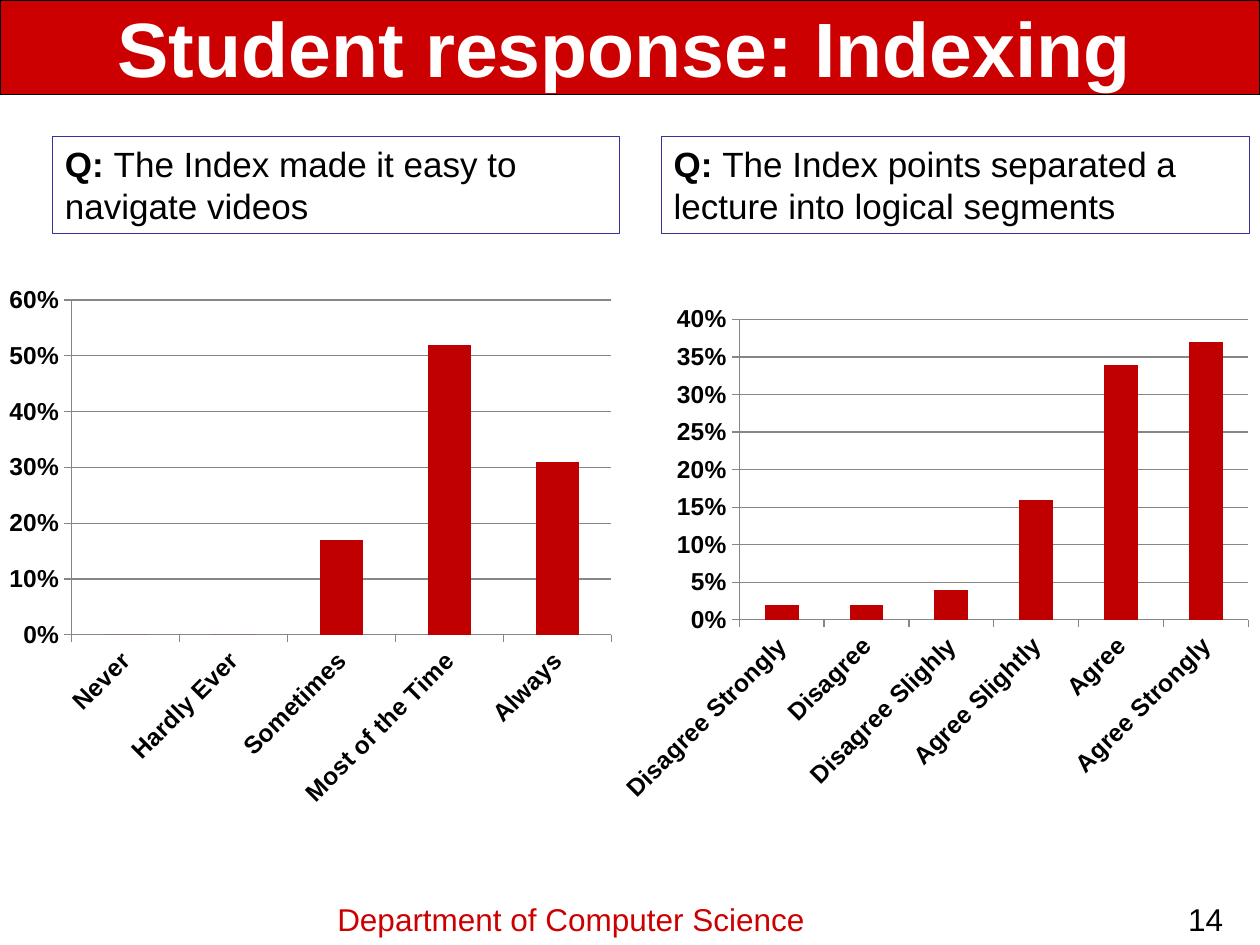
from lxml.etree import SubElement as Sub
from pptx import Presentation
from pptx.chart.data import CategoryChartData as Data
from pptx.dml.color import RGBColor as RGB
from pptx.enum.chart import XL_CHART_TYPE as Kind, XL_TICK_MARK as Tick
from pptx.enum.shapes import MSO_SHAPE as Shape
from pptx.enum.text import MSO_ANCHOR as Anchor, MSO_AUTO_SIZE as Auto, PP_ALIGN as Align
from pptx.oxml.ns import qn
from pptx.util import Cm, Pt

RED = RGB(0xCC, 0x00, 0x00)
BAR = RGB(0xC0, 0x00, 0x00)
NAVY = RGB(0x33, 0x33, 0x99)
GREY = RGB(0x86, 0x86, 0x86)
BLACK = RGB(0x00, 0x00, 0x00)
WHITE = RGB(0xFF, 0xFF, 0xFF)
FACE = "Arial"


def style(font, size, color, bold=False):
    """Set face, size, colour and weight of a font."""
    font.name, font.size, font.bold = FACE, Pt(size), bold
    font.color.rgb = color


def frame(slide, box, edge):
    """Add a plain rectangle with a thin edge and no fill."""
    rect = slide.shapes.add_shape(Shape.RECTANGLE, *map(Cm, box))
    rect.shadow.inherit = False
    rect.fill.background()
    rect.line.color.rgb = edge
    rect.line.width = Pt(0.75)
    return rect


def header(slide, box, text):
    """Put the title on a red band that fills the box."""
    left, top, width, height = box
    band = frame(slide, box, BLACK)
    band.fill.solid()
    band.fill.fore_color.rgb = RED
    title = slide.shapes.title
    band.element.addnext(title.element)
    title.left, title.top = Cm(left + 0.64), Cm(top)
    title.width, title.height = Cm(width - 1.48), Cm(height)
    body = title.text_frame
    body.text = text
    body.auto_size = Auto.NONE
    body.vertical_anchor = Anchor.MIDDLE
    body.paragraphs[0].alignment = Align.CENTER
    style(body.paragraphs[0].runs[0].font, 44, WHITE, True)


def query(slide, box, text):
    """Add a framed question with a bold lead."""
    body = frame(slide, box, NAVY).text_frame
    body.word_wrap = True
    body.vertical_anchor = Anchor.TOP
    para = body.paragraphs[0]
    para.alignment = Align.LEFT
    for part, bold in (("Q: ", True), (text, False)):
        run = para.add_run()
        run.text = part
        style(run.font, 20, BLACK, bold)


def place(chart, inner):
    """Fix the inner plot area at fractions of the chart."""
    plot = chart.element.find(".//" + qn("c:plotArea"))
    lay = plot.find(qn("c:layout"))
    if lay is None:
        lay = plot.makeelement(qn("c:layout"))
        plot.insert(0, lay)
    man = Sub(lay, qn("c:manualLayout"))
    Sub(man, qn("c:layoutTarget"), val="inner")
    for name in ("xMode", "yMode"):
        Sub(man, qn("c:" + name), val="edge")
    for name, part in zip("xywh", inner):
        Sub(man, qn("c:" + name), val=str(part))


def graph(slide, box, names, vals, top, step, inner):
    """Add a column chart of answer shares."""
    data = Data(number_format="0%")
    data.categories = names
    data.add_series("Series 1", vals)
    chart = slide.shapes.add_chart(Kind.COLUMN_STACKED, *map(Cm, box), data).chart
    chart.has_legend = chart.has_title = False
    style(chart.font, 14, BLACK, True)
    plot = chart.plots[0]
    plot.gap_width, plot.overlap = 150, 100
    plot.vary_by_categories = False
    fill = plot.series[0].format.fill
    fill.solid()
    fill.fore_color.rgb = BAR
    cat, val = chart.category_axis, chart.value_axis
    val.minimum_scale, val.maximum_scale, val.major_unit = 0, top, step
    val.has_major_gridlines = True
    val.tick_labels.number_format = "0%"
    val.tick_labels.number_format_is_linked = False
    for axis in (cat, val):
        axis.major_tick_mark = Tick.OUTSIDE
        style(axis.tick_labels.font, 14, BLACK, True)
    for line in (cat.format.line, val.format.line, val.major_gridlines.format.line):
        line.color.rgb = GREY
        line.width = Pt(0.75)
    steps = map(qn, ("c:catAx", "c:txPr", "a:bodyPr"))
    turn = chart.element.find(".//" + "/".join(steps))
    turn.set("rot", "-2700000")
    turn.set("vert", "horz")
    place(chart, inner)


def label(slide, box, text, color, wrap):
    """Add one line of footer text."""
    body = slide.shapes.add_textbox(*map(Cm, box)).text_frame
    body.word_wrap = wrap
    body.text = text
    style(body.paragraphs[0].runs[0].font, 18, color)


def footer(slide, box, text, page):
    """Place the department name and page number in the box."""
    left, top, width, height = box
    label(slide, (left + 6.55, top, 10.03, height), text, RED, False)
    label(slide, (left + width - 1.7, top, 1.27, height), page, BLACK, True)


def main():
    """Build and save the slide."""
    deck = Presentation()
    deck.slide_width, deck.slide_height = Cm(25.4), Cm(19.05)
    slide = deck.slides.add_slide(deck.slide_layouts[5])
    header(slide, (0, 0, 25.4, 1.9), "Student response: Indexing")
    query(slide, (1.06, 2.75, 11.43, 1.96),
          "The Index made it easy to navigate videos")
    query(slide, (13.33, 2.75, 11.86, 1.96),
          "The Index points separated a lecture into logical segments")
    graph(slide, (0.1, 5.05, 12.24, 12.5),
          ("Never", "Hardly Ever", "Sometimes", "Most of the Time", "Always"),
          (0, 0, 0.17, 0.52, 0.31), 0.6, 0.1, (0.11, 0.08, 0.89, 0.54))
    graph(slide, (12.27, 5.92, 13.16, 10.44),
          ("Disagree Strongly", "Disagree", "Disagree Slighly",
           "Agree Slightly", "Agree", "Agree Strongly"),
          (0.02, 0.02, 0.04, 0.16, 0.34, 0.37), 0.4, 0.05,
          (0.2, 0.05, 0.78, 0.58))
    footer(slide, (0, 18.01, 25.4, 1.02), "Department of Computer Science", "14")
    deck.save("out.pptx")


if __name__ == "__main__":
    main()
